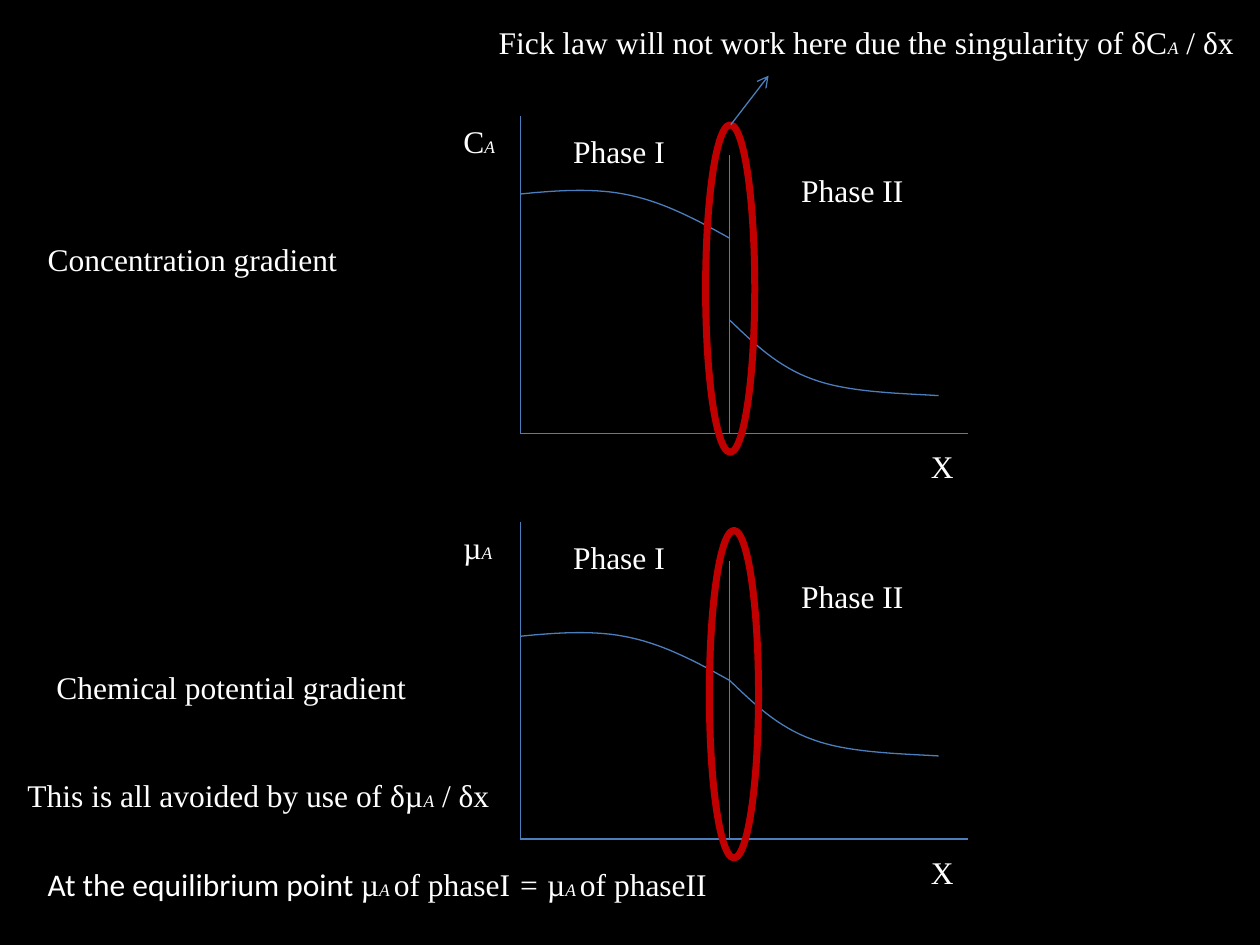
"""Build the slide comparing concentration and chemical potential gradients."""
from dataclasses import dataclass
from typing import NamedTuple

from lxml.etree import SubElement
from pptx import Presentation
from pptx.dml.color import RGBColor
from pptx.enum.shapes import MSO_CONNECTOR, MSO_SHAPE
from pptx.enum.text import MSO_AUTO_SIZE
from pptx.oxml.ns import qn
from pptx.util import Inches, Pt

SERIF = "Times New Roman"
BLACK, WHITE, BLUE, RED = "000000", "FFFFFF", "4B7EBC", "C00000"
AXIS_LEFT, AXIS_RIGHT, INTERFACE = 4.13, 7.68, 5.79
AXIS_HEIGHT, INTERFACE_DROP = 2.52, 0.31
CURVE_STEPS = 16

Point = tuple[float, float]
PHASE_I_CURVE: list[Point] = [
    (0, 0), (0.3, -0.03), (0.6, -0.05), (0.87, 0.01),
    (1.15, 0.07), (1.41, 0.21), (1.66, 0.35),
]
PHASE_II_CURVE: list[Point] = [
    (0, 0), (0.19, 0.18), (0.38, 0.37), (0.66, 0.47),
    (0.93, 0.57), (1.3, 0.58), (1.66, 0.6),
]


class Span(NamedTuple):
    text: str
    size: float | None = None
    italic: bool | None = None
    font: str | None = None


@dataclass
class Label:
    left: float
    top: float
    width: float
    spans: list[Span]


@dataclass
class Panel:
    top: float
    symbol: str
    symbol_width: float
    phase_i_start: float
    phase_ii_start: float
    highlight_left: float


def subscript(text: str) -> Span:
    return Span(text, 10, True)


def rgb(value: str) -> RGBColor:
    return RGBColor.from_string(value)


def add_label(slide, label: Label) -> None:
    box = slide.shapes.add_textbox(
        Inches(label.left), Inches(label.top), Inches(label.width), Inches(0.4)
    )
    frame = box.text_frame
    frame.word_wrap = False
    frame.auto_size = MSO_AUTO_SIZE.SHAPE_TO_FIT_TEXT
    paragraph = frame.paragraphs[0]
    paragraph.font.name = SERIF
    paragraph.font.size = Pt(18)
    paragraph.font.color.rgb = rgb(WHITE)
    for span in label.spans:
        run = paragraph.add_run()
        run.text = span.text
        run.font.italic = span.italic
        if span.size:
            run.font.size = Pt(span.size)
        if span.font:
            run.font.name = span.font


def add_line(slide, start: Point, end: Point, arrow: bool = False) -> None:
    line = slide.shapes.add_connector(
        MSO_CONNECTOR.STRAIGHT, *map(Inches, start + end)
    )
    line.line.color.rgb = rgb(BLUE)
    line.line.width = Pt(0.75)
    properties = line._element.spPr
    if arrow:
        SubElement(properties.find(qn("a:ln")), qn("a:tailEnd"), type="arrow")
    SubElement(properties, qn("a:effectLst"))


def outline(shape, color: str, width: float) -> None:
    shape.shadow.inherit = False
    shape.fill.background()
    shape.line.color.rgb = rgb(color)
    shape.line.width = Pt(width)


def bezier_points(controls: list[Point]) -> list[Point]:
    points = [controls[0]]
    for first in range(0, len(controls) - 1, 3):
        segment = controls[first:first + 4]
        for step in range(1, CURVE_STEPS + 1):
            t = step / CURVE_STEPS
            weights = ((1 - t) ** 3, 3 * t * (1 - t) ** 2, 3 * t**2 * (1 - t), t**3)
            points.append((
                sum(w * x for w, (x, _) in zip(weights, segment)),
                sum(w * y for w, (_, y) in zip(weights, segment)),
            ))
    return points


def add_curve(slide, left: float, top: float, controls: list[Point]) -> None:
    start, *rest = [
        (Inches(left + x), Inches(top + y)) for x, y in bezier_points(controls)
    ]
    builder = slide.shapes.build_freeform(*start)
    builder.add_line_segments(rest, close=False)
    outline(builder.convert_to_shape(), BLUE, 0.75)


def add_panel(slide, panel: Panel) -> None:
    top, bottom = panel.top, panel.top + AXIS_HEIGHT
    add_line(slide, (AXIS_LEFT, top), (AXIS_LEFT, bottom))
    add_line(slide, (AXIS_LEFT, bottom), (AXIS_RIGHT, bottom))
    add_line(slide, (INTERFACE, top + INTERFACE_DROP), (INTERFACE, bottom))
    add_curve(slide, AXIS_LEFT, panel.phase_i_start, PHASE_I_CURVE)
    add_curve(slide, INTERFACE, panel.phase_ii_start, PHASE_II_CURVE)
    symbol = [Span(panel.symbol), subscript("A")]
    add_label(slide, Label(3.58, top, panel.symbol_width, symbol))
    add_label(slide, Label(7.29, top + 2.58, 0.38, [Span("X")]))
    add_label(slide, Label(4.45, top + 0.08, 0.93, [Span("Phase I")]))
    add_label(slide, Label(6.26, top + 0.39, 1.02, [Span("Phase II")]))


def add_highlight(slide, panel: Panel) -> None:
    ellipse = slide.shapes.add_shape(
        MSO_SHAPE.OVAL, Inches(panel.highlight_left), Inches(panel.top + 0.07),
        Inches(0.39), Inches(2.6),
    )
    outline(ellipse, RED, 4)


PANELS = [
    Panel(0.92, "C", 0.47, 1.54, 2.54, 5.6),
    Panel(4.14, "µ", 0.43, 5.05, 5.4, 5.63),
]
GRADIENT_NAMES = [
    Label(0.28, 1.86, 2.57, [Span("Concentration gradient")]),
    Label(0.35, 5.25, 3.04, [Span("Chemical potential gradient")]),
]
FICK_REMARK = Label(3.86, 0.13, 6.1, [
    Span("Fick law will not work here due the singularity of δC"),
    subscript("A"), Span(" / δx"),
])
CONCLUSIONS = [
    Label(0.12, 6.11, 3.9, [
        Span("This is all avoided by use of δµ"), subscript("A"), Span(" / δx"),
    ]),
    Label(0.28, 6.82, 5.56, [
        Span("At the equilibrium point ", font="Calibri"),
        Span("µ"), subscript("A "), Span("of phaseI "), Span("= ", italic=True),
        Span("µ"), subscript("A "), Span("of phaseII"),
    ]),
]


def main() -> None:
    presentation = Presentation()
    presentation.slide_width, presentation.slide_height = Inches(10), Inches(7.5)
    slide = presentation.slides.add_slide(presentation.slide_layouts[6])
    slide.background.fill.solid()
    slide.background.fill.fore_color.rgb = rgb(BLACK)
    for panel in PANELS:
        add_panel(slide, panel)
    for name in GRADIENT_NAMES:
        add_label(slide, name)
    for panel in PANELS:
        add_highlight(slide, panel)
    add_label(slide, FICK_REMARK)
    add_line(slide, (5.8, 0.99), (6.1, 0.6), arrow=True)
    for conclusion in CONCLUSIONS:
        add_label(slide, conclusion)
    presentation.save("out.pptx")


if __name__ == "__main__":
    main()
